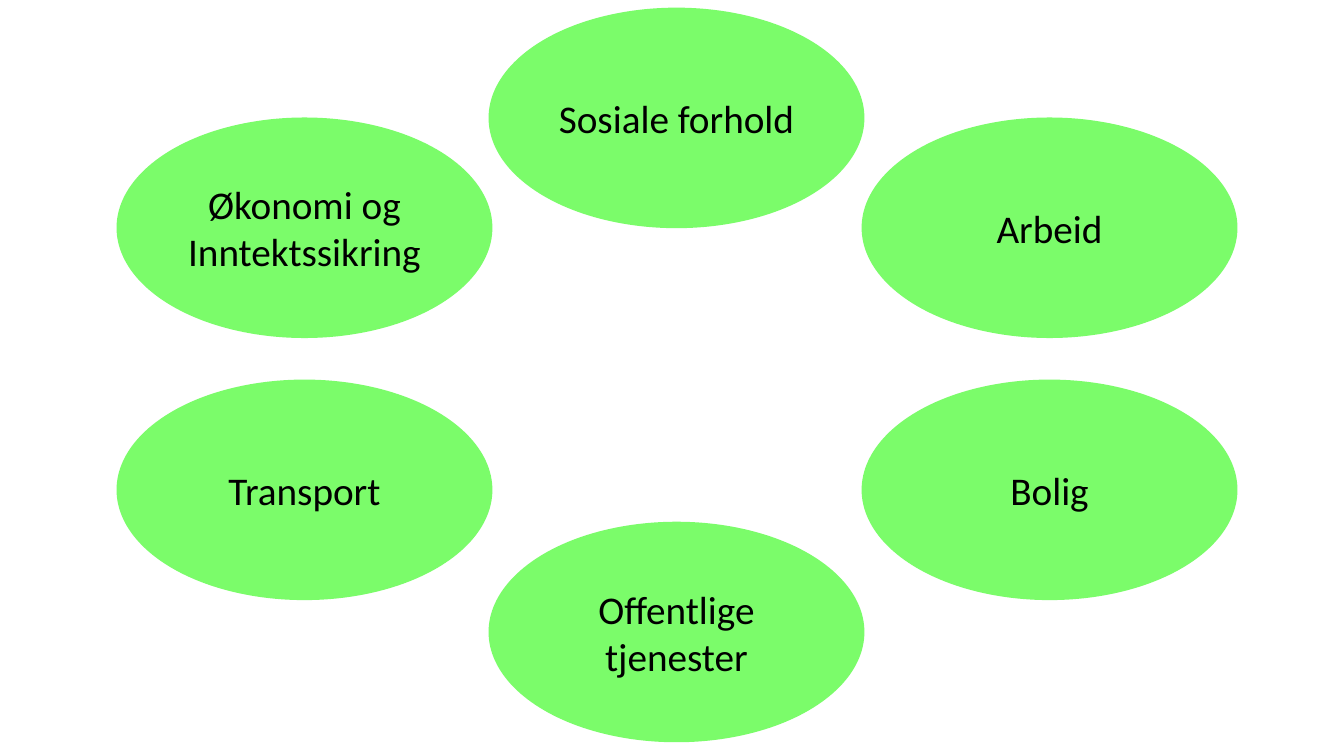
from dataclasses import dataclass

from pptx import Presentation
from pptx.dml.color import RGBColor
from pptx.enum.shapes import MSO_SHAPE
from pptx.enum.text import MSO_ANCHOR, PP_ALIGN
from pptx.util import Inches, Pt


@dataclass(frozen=True)
class Theme:
    green: RGBColor = RGBColor(0x7B, 0xFC, 0x6A)
    black: RGBColor = RGBColor(0, 0, 0)
    font: str = "Calibri"
    text_size: Pt = Pt(28)
    line_width: Pt = Pt(2)


theme = Theme()

deck = Presentation()
deck.slide_width, deck.slide_height = Inches(13.33), Inches(7.5)
BLANK_LAYOUT = 6
page = deck.slides.add_slide(deck.slide_layouts[BLANK_LAYOUT])

OVAL_WIDTH, OVAL_HEIGHT = 3.7, 2.16
LEFT, CENTRE, RIGHT = 1.17, 4.86, 8.56
TOP, UPPER, LOWER, BOTTOM = 0.09, 1.18, 3.78, 5.19

topics = [
    ("Offentlige tjenester", CENTRE, BOTTOM),
    ("Transport", LEFT, LOWER),
    ("Økonomi og Inntektssikring", LEFT, UPPER),
    ("Sosiale forhold", CENTRE, TOP),
    ("Arbeid", RIGHT, UPPER),
    ("Bolig", RIGHT, LOWER),
]

for topic, left, top in topics:
    oval = page.shapes.add_shape(
        MSO_SHAPE.OVAL, Inches(left), Inches(top), Inches(OVAL_WIDTH), Inches(OVAL_HEIGHT)
    )
    oval.shadow.inherit = False
    oval.fill.solid()
    oval.fill.fore_color.rgb = theme.green
    oval.line.color.rgb = theme.green
    oval.line.width = theme.line_width

    frame = oval.text_frame
    frame.text = topic
    frame.word_wrap = True
    frame.vertical_anchor = MSO_ANCHOR.MIDDLE
    para = frame.paragraphs[0]
    para.alignment = PP_ALIGN.CENTER
    font = para.runs[0].font
    font.name = theme.font
    font.size = theme.text_size
    font.color.rgb = theme.black

deck.save("out.pptx")
